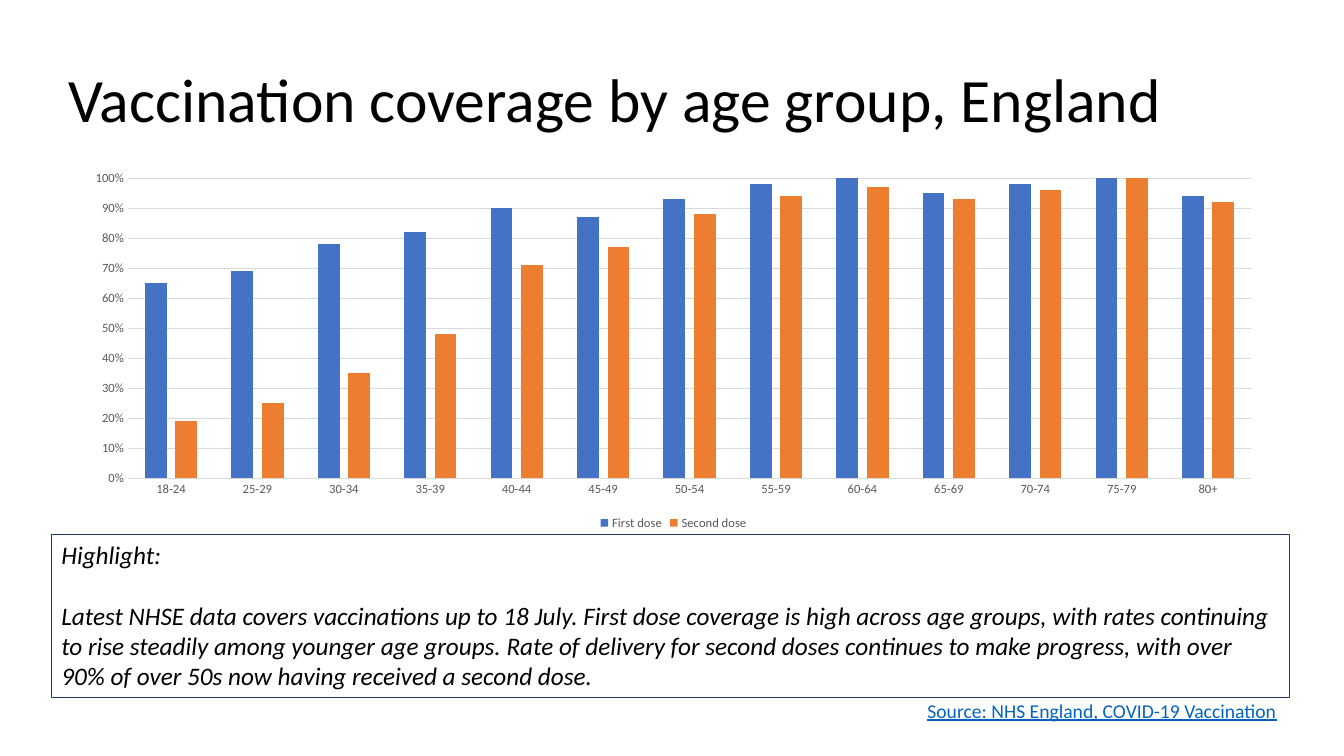
from pptx import Presentation
from pptx.chart.data import CategoryChartData
from pptx.dml.color import RGBColor
from pptx.enum import chart as ch, shapes, text
from pptx.util import Inches, Pt

COLORS = {
    "black": "000000", "grey": "595959", "grid": "D9D9D9", "border": "203864",
    "link": "0563C1", "first": "4472C4", "second": "ED7D31",
}


def color(name):
    return RGBColor.from_string(COLORS[name])


def write(paragraph, words, size, ink="black", italic=None, underline=None,
          align=text.PP_ALIGN.LEFT, before=0, spacing=None):
    paragraph.alignment = align
    paragraph.space_before = Pt(before)
    paragraph.line_spacing = spacing
    run = paragraph.add_run()
    run.text = words
    run.font.name = "Calibri"
    run.font.size = Pt(size)
    run.font.italic = italic
    run.font.underline = underline
    run.font.color.rgb = color(ink)


prs = Presentation()
prs.slide_width, prs.slide_height = Inches(13.33), Inches(7.5)
slide = prs.slides.add_slide(prs.slide_layouts[6])

# Title
title = slide.shapes.add_textbox(Inches(0.58), Inches(0.29), Inches(11.5), Inches(1.45)).text_frame
title.word_wrap = True
title.vertical_anchor = text.MSO_ANCHOR.MIDDLE
write(title.paragraphs[0], "Vaccination coverage by age group, England", 44, spacing=0.9)

# Highlight box
highlight = slide.shapes.add_shape(
    shapes.MSO_SHAPE.RECTANGLE, Inches(0.51), Inches(5.3), Inches(12.28), Inches(1.62))
highlight.shadow.inherit = False
highlight.fill.background()
highlight.line.color.rgb = color("border")
highlight.line.width = Pt(0.75)
message = highlight.text_frame
message.word_wrap = True
message.vertical_anchor = text.MSO_ANCHOR.TOP
write(message.paragraphs[0], "Highlight:", 18, italic=True)
write(message.add_paragraph(),
      "Latest NHSE data covers vaccinations up to 18 July. First dose coverage is high across "
      "age groups, with rates continuing to rise steadily among younger age groups. Rate of "
      "delivery for second doses continues to make progress, with over 90% of over 50s now "
      "having received a second dose.", 18, italic=True, before=22)

# Source line
source = slide.shapes.add_textbox(Inches(9.1), Inches(6.88), Inches(3.73), Inches(0.34)).text_frame
source.word_wrap = False
write(source.paragraphs[0], "Source: NHS England, COVID-19 Vaccination", 14,
      ink="link", underline=True)

# Coverage chart
coverage = CategoryChartData(number_format="0%")
coverage.categories = ["18-24", "25-29", "30-34", "35-39", "40-44", "45-49", "50-54",
                       "55-59", "60-64", "65-69", "70-74", "75-79", "80+"]
coverage.add_series("First dose", [0.65, 0.69, 0.78, 0.82, 0.9, 0.87, 0.93,
                                   0.98, 1, 0.95, 0.98, 1.02, 0.94])
coverage.add_series("Second dose", [0.19, 0.25, 0.35, 0.48, 0.71, 0.77, 0.88,
                                    0.94, 0.97, 0.93, 0.96, 1.01, 0.92])
chart = slide.shapes.add_chart(
    ch.XL_CHART_TYPE.COLUMN_CLUSTERED, Inches(0.71), Inches(1.62), Inches(11.94), Inches(3.68),
    coverage).chart
chart.has_title = False
chart.font.name = "Calibri"
chart.font.size = Pt(10)
chart.font.color.rgb = color("black")

bars = chart.plots[0]
bars.vary_by_categories = False
bars.gap_width, bars.overlap = 156, -40
for dose, fill in zip(bars.series, ("first", "second")):
    dose.format.fill.solid()
    dose.format.fill.fore_color.rgb = color(fill)
    dose.invert_if_negative = False

chart.has_legend = True
chart.legend.position = ch.XL_LEGEND_POSITION.BOTTOM
chart.legend.include_in_layout = False

ages, rates = chart.category_axis, chart.value_axis
for axis in (ages, rates):
    axis.major_tick_mark = axis.minor_tick_mark = ch.XL_TICK_MARK.NONE
for font in (ages.tick_labels.font, rates.tick_labels.font, chart.legend.font):
    font.name = "Calibri"
    font.size = Pt(9)
    font.color.rgb = color("grey")

rates.minimum_scale, rates.maximum_scale, rates.major_unit = 0, 1, 0.1
rates.tick_labels.number_format = "0%"
rates.tick_labels.number_format_is_linked = False
rates.format.line.fill.background()
rates.has_major_gridlines = True
for line in (ages.format.line, rates.major_gridlines.format.line):
    line.color.rgb = color("grid")
    line.width = Pt(0.75)

prs.save("out.pptx")
